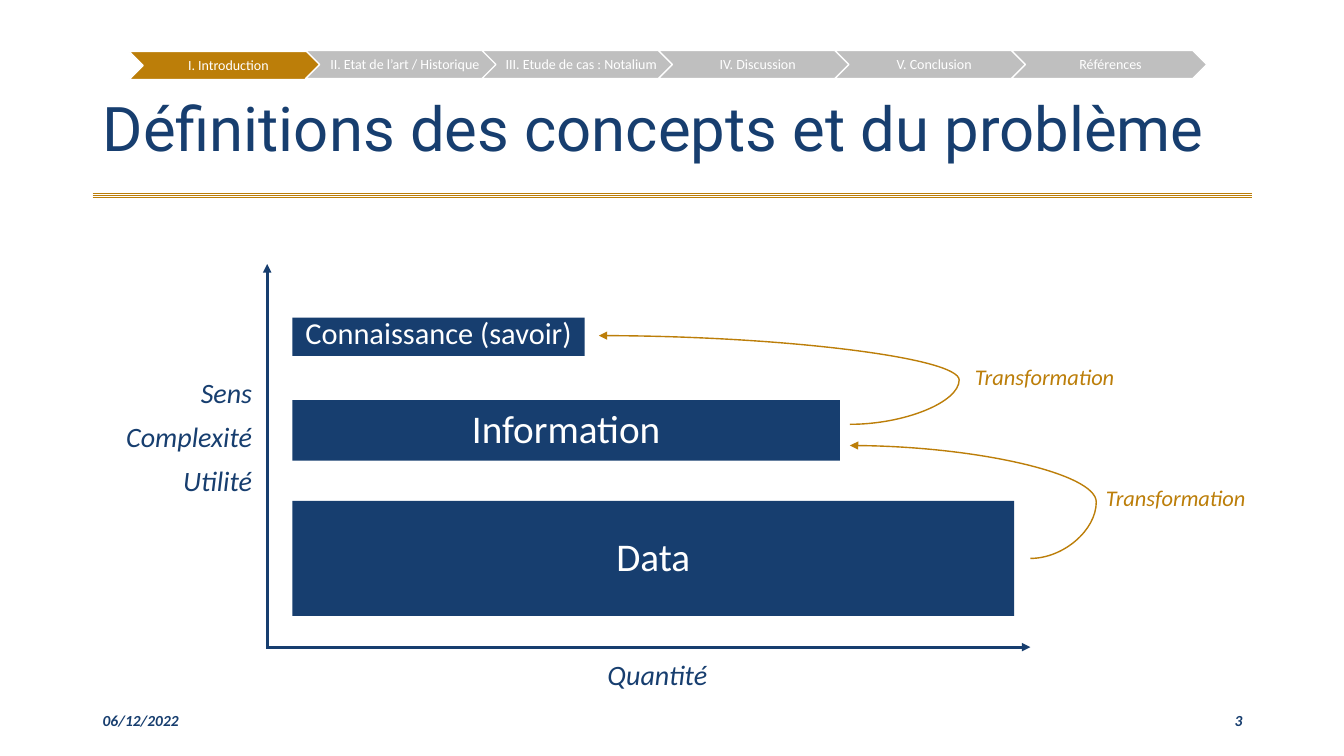
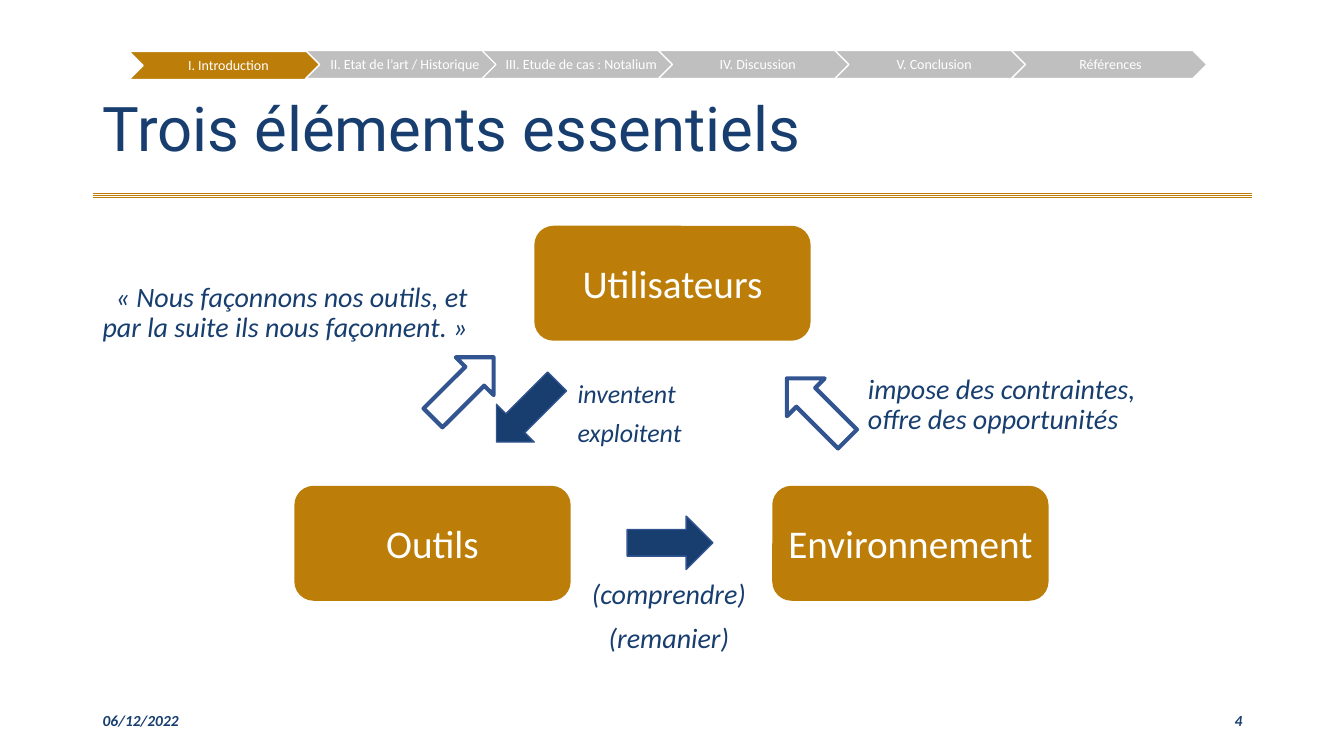
"""Builds two slides on knowledge concepts and the user, tool and environment loop."""
from lxml import etree
from pptx import Presentation
from pptx.dml.color import RGBColor
from pptx.enum.shapes import MSO_CONNECTOR, MSO_SHAPE
from pptx.enum.text import MSO_ANCHOR, PP_ALIGN
from pptx.oxml.ns import qn
from pptx.util import Inches, Pt

NAVY = RGBColor(0x17, 0x3E, 0x6F)
GOLD = RGBColor(0xBC, 0x7E, 0x09)
GREY = RGBColor(0xBF, 0xBF, 0xBF)
WHITE = RGBColor(0xFF, 0xFF, 0xFF)
OUTLINE = RGBColor(0x32, 0x54, 0x91)

LEFT, CENTER, RIGHT = PP_ALIGN.LEFT, PP_ALIGN.CENTER, PP_ALIGN.RIGHT
TOP, MIDDLE = MSO_ANCHOR.TOP, MSO_ANCHOR.MIDDLE
RECTANGLE, ROUNDED = MSO_SHAPE.RECTANGLE, MSO_SHAPE.ROUNDED_RECTANGLE
CHEVRON, DOWN_ARROW = MSO_SHAPE.CHEVRON, MSO_SHAPE.DOWN_ARROW
STRAIGHT, CURVE = MSO_CONNECTOR.STRAIGHT, MSO_CONNECTOR.CURVE

BODY_FONT = "Calibri"
TITLE_FONT = "Roboto"
DATE = "06/12/2022"
SECTIONS = [
    "I. Introduction",
    "II. Etat de l’art / Historique",
    "III. Etude de cas : Notalium",
    "IV. Discussion",
    "V. Conclusion",
    "Références",
]
CURRENT_SECTION = 0
SECTION_PITCH = 1.75


def write(frame, text, size=20, color=NAVY, font=BODY_FONT, bold=False, italic=False,
          align=LEFT, anchor=TOP, spacing=0.9, before=0, insets=(0.1, 0.05, 0.1, 0.05)):
    """Fill a text frame, one paragraph per line of text."""
    frame.word_wrap = True
    frame.vertical_anchor = anchor
    frame.margin_left, frame.margin_top, frame.margin_right, frame.margin_bottom = map(Inches, insets)
    for index, line in enumerate(text.split("\n")):
        paragraph = frame.add_paragraph() if index else frame.paragraphs[0]
        paragraph.alignment = align
        paragraph.line_spacing = spacing
        paragraph.space_before = Pt(before)
        run = paragraph.add_run()
        run.text = line
        run.font.name = font
        run.font.size = Pt(size)
        run.font.bold = bold
        run.font.italic = italic
        run.font.color.rgb = color


class Deck:
    """Holds the shared style and the current slide."""

    def __init__(self):
        """Start a widescreen presentation."""
        self.presentation = Presentation()
        self.presentation.slide_width = Inches(13.33)
        self.presentation.slide_height = Inches(7.5)
        self.slide = None

    def new_slide(self, title, number):
        """Add a slide with its rules, title, footer and section band."""
        self.slide = self.presentation.slides.add_slide(self.presentation.slide_layouts[6])
        for rule in range(3):
            y = 1.92 + 0.02 * rule
            self.line(0.92, y, 12.42, y, GOLD, 0.5)
        self.text(title, 0.92, 0.74, 11.5, 1.14, size=44, font=TITLE_FONT, anchor=MIDDLE)
        footer = {"size": 11, "bold": True, "italic": True, "anchor": MIDDLE, "spacing": 1.0}
        self.text(DATE, 0.92, 6.95, 1.31, 0.4, **footer)
        self.text(str(number), 11.44, 6.95, 0.98, 0.4, align=RIGHT, **footer)
        for index, section in enumerate(SECTIONS):
            current = index == CURRENT_SECTION
            self.shape(CHEVRON, 1.28 + SECTION_PITCH * index, 0.51 if current else 0.5, 1.94, 0.28,
                       fill=GOLD if current else GREY, outline=WHITE, text=section,
                       size=10, insets=(0.04, 0.01, 0.01, 0.01))

    def text(self, text, left, top, width, height, **style):
        """Add a text box."""
        box = self.slide.shapes.add_textbox(*map(Inches, (left, top, width, height)))
        write(box.text_frame, text, **style)

    def label(self, text, left, top, width, height, **style):
        """Add an italic annotation."""
        self.text(text, left, top, width, height, **{"italic": True, "before": 10, **style})

    def shape(self, kind, left, top, width, height, fill=None, outline=None, weight=1,
              rotation=0, text="", **style):
        """Add a preset shape, with centred white text if given."""
        shape = self.slide.shapes.add_shape(kind, *map(Inches, (left, top, width, height)))
        shape.shadow.inherit = False
        shape.rotation = rotation
        if fill is None:
            shape.fill.background()
        else:
            shape.fill.solid()
            shape.fill.fore_color.rgb = fill
        if outline is None:
            shape.line.fill.background()
        else:
            shape.line.color.rgb = outline
            shape.line.width = Pt(weight)
        if text:
            write(shape.text_frame, text, color=WHITE, align=CENTER, anchor=MIDDLE, **style)

    def line(self, x1, y1, x2, y2, color, weight, arrow=False, bend=None):
        """Add a line, curved when a bend is given."""
        kind = STRAIGHT if bend is None else CURVE
        connector = self.slide.shapes.add_connector(kind, *map(Inches, (x1, y1, x2, y2)))
        connector.line.color.rgb = color
        connector.line.width = Pt(weight)
        properties = connector.element.spPr
        if arrow:
            etree.SubElement(properties.find(qn("a:ln")), qn("a:tailEnd"), type="triangle")
        if bend is not None:
            adjustments = properties.find(qn("a:prstGeom")).get_or_add_avLst()
            etree.SubElement(adjustments, qn("a:gd"), name="adj1", fmla=f"val {round(bend * 100000)}")
        etree.SubElement(properties, qn("a:effectLst"))


def concepts_slide(deck):
    """Draw the data, information and knowledge levels."""
    deck.new_slide("Définitions des concepts et du problème", 3)
    deck.line(2.65, 6.42, 2.65, 2.62, NAVY, 2, arrow=True)
    levels = [
        ("Connaissance (savoir)", 3.15, 2.9, 0.38, 21.7, 0.7),
        ("Information", 3.97, 5.43, 0.6, 28, 0.9),
        ("Data", 4.97, 7.16, 1.14, 28, 0.9),
    ]
    for level, top, width, height, size, spacing in levels:
        deck.shape(RECTANGLE, 2.9, top, width, height, fill=NAVY, text=level,
                   size=size, spacing=spacing, before=10)
    deck.label("Sens\nComplexité\nUtilité", 0.74, 3.71, 1.86, 1.41, align=RIGHT)
    deck.line(2.64, 6.42, 10.22, 6.42, NAVY, 2, arrow=True)
    deck.label("Quantité", 5.71, 6.51, 1.62, 0.44, align=CENTER)
    transformations = [
        ((10.22, 5.54, 8.43, 4.42), -0.365, 10.84, 4.78),
        ((8.43, 4.21, 5.94, 3.33), -0.435, 9.54, 3.58),
    ]
    for ends, bend, left, top in transformations:
        deck.line(*ends, GOLD, 1, arrow=True, bend=bend)
        deck.label("Transformation", left, top, 1.61, 0.4, size=16, color=GOLD, align=RIGHT)


def elements_slide(deck):
    """Draw the loop of users, tools and environment."""
    deck.new_slide("Trois éléments essentiels", 4)
    elements = [("Utilisateurs", 5.3, 2.24), ("Environnement", 7.66, 4.82), ("Outils", 2.92, 4.82)]
    for element, left, top in elements:
        deck.shape(ROUNDED, left, top, 2.74, 1.14, fill=GOLD, text=element, size=28, spacing=1.0)
    arrows = [
        (4.96, 3.66, 45, NAVY, 1),
        (7.84, 3.63, 135, None, 3),
        (6.38, 4.96, 270, NAVY, 1),
        (4.33, 3.42, 225, None, 3),
    ]
    for left, top, rotation, fill, weight in arrows:
        deck.shape(DOWN_ARROW, left, top, 0.53, 0.85, fill=fill, outline=OUTLINE,
                   weight=weight, rotation=rotation)
    deck.label("« Nous façonnons nos outils, et par la suite ils nous façonnent. »",
               0.88, 2.76, 3.86, 0.74, align=RIGHT)
    deck.label("impose des contraintes, offre des opportunités", 8.51, 3.67, 3.07, 0.78)
    deck.label("inventent\nexploitent", 5.63, 3.76, 1.66, 0.78, size=18.5, spacing=0.8)
    deck.label("(comprendre)\n(remanier)", 5.62, 5.71, 2.03, 0.88, align=CENTER)


def main():
    """Build and save the slides."""
    deck = Deck()
    concepts_slide(deck)
    elements_slide(deck)
    deck.presentation.save("out.pptx")


if __name__ == "__main__":
    main()
